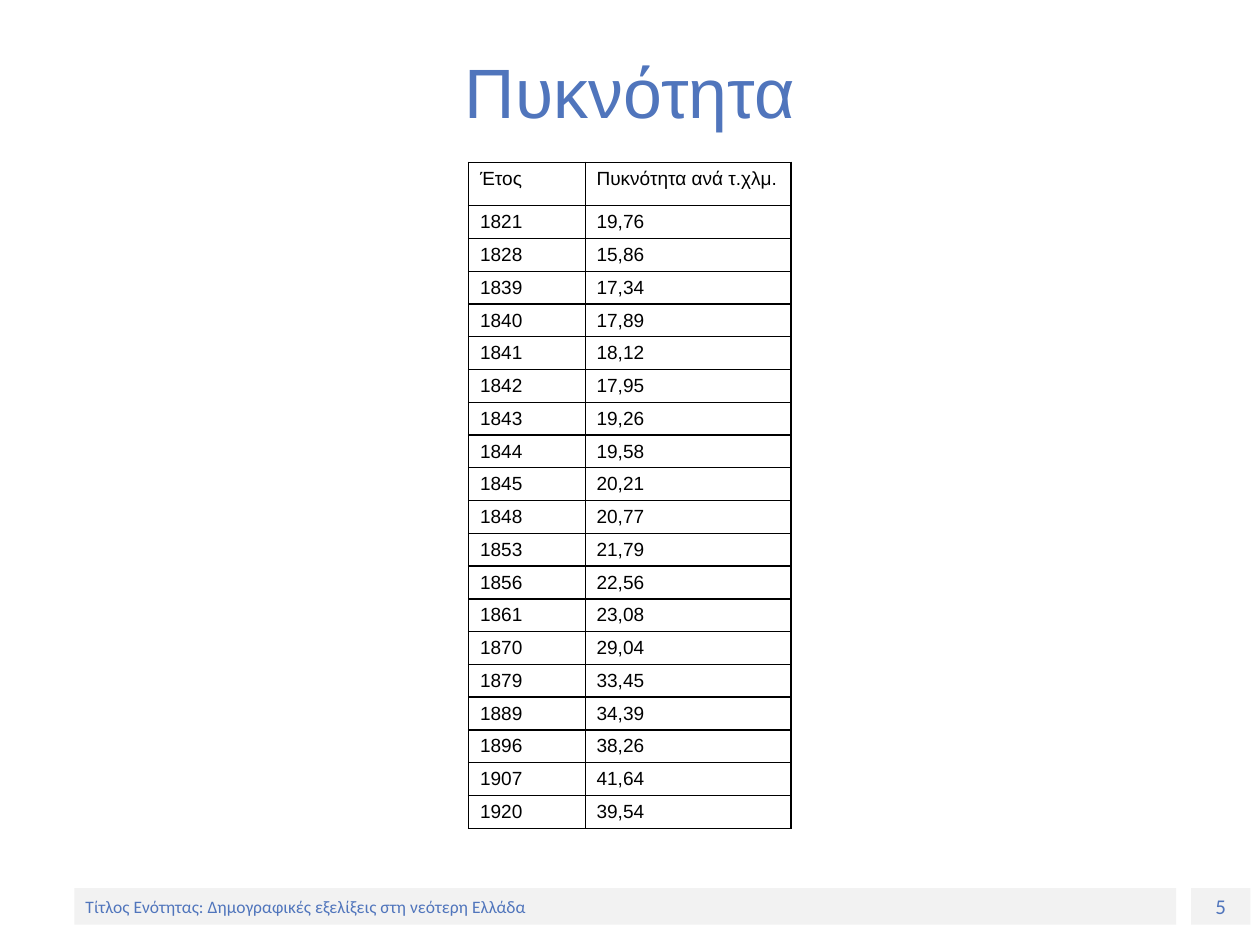
from pptx import Presentation
from pptx.dml.color import RGBColor
from pptx.enum.shapes import MSO_SHAPE as Shape
from pptx.enum.text import MSO_ANCHOR as Anchor, PP_ALIGN as Align
from pptx.oxml import parse_xml
from pptx.oxml.ns import nsdecls
from pptx.util import Cm, Inches, Pt

# Content
TITLE = "Πυκνότητα"
FOOTER = "Τίτλος Ενότητας: Δημογραφικές εξελίξεις στη νεότερη Ελλάδα"
PAGE_NUMBER = "5"
HEADER = ("Έτος", "Πυκνότητα ανά τ.χλμ.")
DENSITY = [
    ("1821", "19,76"), ("1828", "15,86"), ("1839", "17,34"), ("1840", "17,89"),
    ("1841", "18,12"), ("1842", "17,95"), ("1843", "19,26"), ("1844", "19,58"),
    ("1845", "20,21"), ("1848", "20,77"), ("1853", "21,79"), ("1856", "22,56"),
    ("1861", "23,08"), ("1870", "29,04"), ("1879", "33,45"), ("1889", "34,39"),
    ("1896", "38,26"), ("1907", "41,64"), ("1920", "39,54"),
]

THEME = {
    "blue": RGBColor.from_string("5075BC"),
    "band": RGBColor.from_string("F2F2F2"),
    "ink": RGBColor.from_string("000000"),
    "body_font": "Arial", "footer_font": "Calibri",
    "title_size": 44, "table_size": 12, "footer_size": 11, "number_size": 13.2,
    "border": 1,
}

# Layout in inches
TABLE_LEFT, TABLE_TOP, TABLE_HEIGHT = 4.1, 1.42, 5.83
COLUMN_WIDTHS = (1.02, 1.8)
HEADER_HEIGHT = 0.38
ROW_HEIGHT = (TABLE_HEIGHT - HEADER_HEIGHT) / len(DENSITY)
CELL_BOTTOM_MARGIN = 0.03
BAND_TOP, BAND_HEIGHT = 7.77, 0.32


def write(frame, text, font, size, color, align=Align.LEFT):
    paragraph = frame.paragraphs[0]
    paragraph.text = text
    paragraph.alignment = align
    paragraph.font.name = font
    paragraph.font.size = Pt(size)
    paragraph.font.color.rgb = color


def add_band(slide, left, width, text, size, align):
    band = slide.shapes.add_shape(Shape.RECTANGLE, Inches(left), Inches(BAND_TOP),
                                  Inches(width), Inches(BAND_HEIGHT))
    band.shadow.inherit = False
    band.fill.solid()
    band.fill.fore_color.rgb = THEME["band"]
    band.line.fill.background()
    band.text_frame.vertical_anchor = Anchor.MIDDLE
    write(band.text_frame, text, THEME["footer_font"], size, THEME["blue"], align)


def add_borders(cell):
    properties = cell._tc.get_or_add_tcPr()
    for side in ("lnL", "lnR", "lnT", "lnB"):
        properties.append(parse_xml(
            f'<a:{side} {nsdecls("a")} w="{Pt(THEME["border"])}"><a:solidFill>'
            f'<a:srgbClr val="{THEME["ink"]}"/></a:solidFill></a:{side}>'))


def add_density_table(slide):
    rows = [HEADER, *DENSITY]
    heights = [HEADER_HEIGHT] + [ROW_HEIGHT] * len(DENSITY)
    table = slide.shapes.add_table(
        len(rows), len(HEADER), Inches(TABLE_LEFT), Inches(TABLE_TOP),
        Inches(sum(COLUMN_WIDTHS)), Inches(TABLE_HEIGHT)).table
    table.first_row = table.horz_banding = False
    for column, width in zip(table.columns, COLUMN_WIDTHS):
        column.width = Inches(width)
    for row, height, values in zip(table.rows, heights, rows):
        row.height = Inches(height)
        for cell, value in zip(row.cells, values):
            add_borders(cell)
            cell.fill.background()
            cell.margin_bottom = Inches(CELL_BOTTOM_MARGIN)
            write(cell.text_frame, value, THEME["body_font"],
                  THEME["table_size"], THEME["ink"])


def main():
    deck = Presentation()
    deck.slide_width = Cm(28)
    deck.slide_height = Cm(21)
    slide = deck.slides.add_slide(deck.slide_layouts[6])

    # Footer and page number
    add_band(slide, 10.42, 0.52, PAGE_NUMBER, THEME["number_size"], Align.CENTER)
    add_band(slide, 0.65, 9.64, FOOTER, THEME["footer_size"], Align.LEFT)

    # Title
    title = slide.shapes.add_textbox(Inches(0.55), Inches(0.33),
                                     Inches(9.92), Inches(0.92)).text_frame
    title.word_wrap = True
    title.vertical_anchor = Anchor.MIDDLE
    write(title, TITLE, THEME["body_font"], THEME["title_size"],
          THEME["blue"], Align.CENTER)

    # Density by year
    add_density_table(slide)
    deck.save("out.pptx")


if __name__ == "__main__":
    main()
